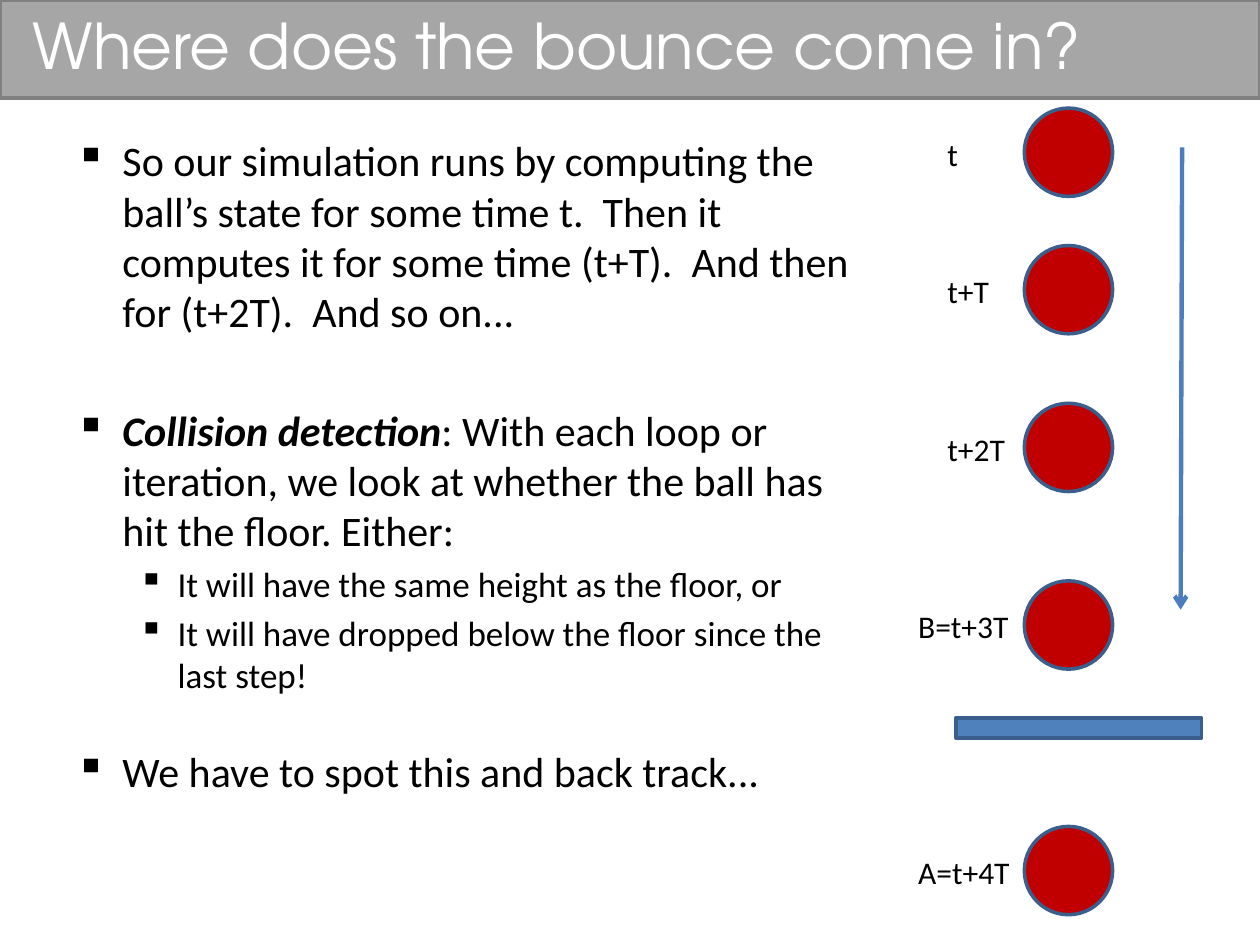
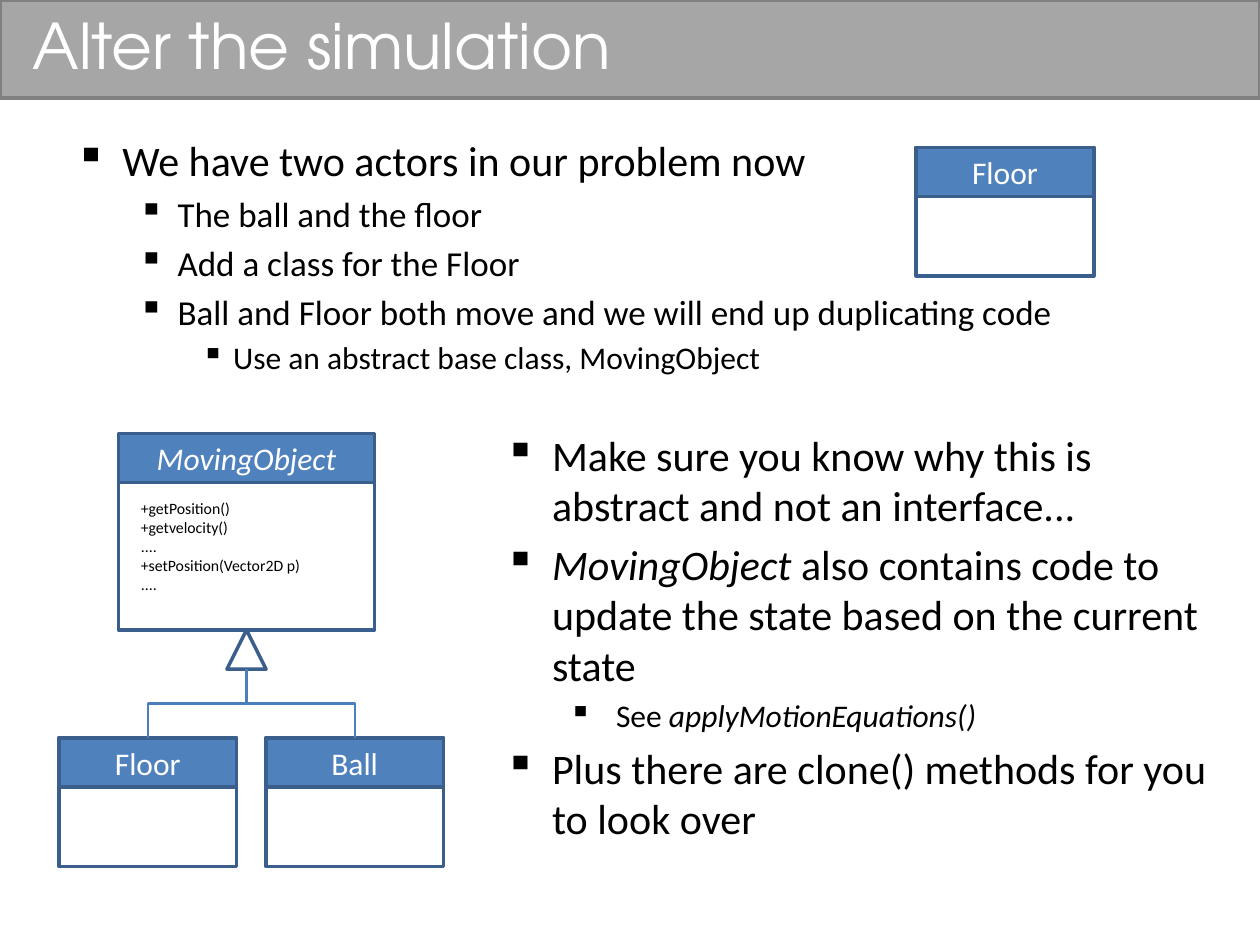
from lxml import etree
from pptx import Presentation
from pptx.dml.color import RGBColor
from pptx.enum.shapes import MSO_CONNECTOR, MSO_SHAPE
from pptx.enum.text import MSO_ANCHOR, PP_ALIGN
from pptx.oxml.ns import qn
from pptx.util import Cm, Pt

RECT, OVAL = MSO_SHAPE.RECTANGLE, MSO_SHAPE.OVAL
PROCESS, EXTRACT = MSO_SHAPE.FLOWCHART_PROCESS, MSO_SHAPE.FLOWCHART_EXTRACT
STRAIGHT, ELBOW = MSO_CONNECTOR.STRAIGHT, MSO_CONNECTOR.ELBOW
LEFT, CENTER = PP_ALIGN.LEFT, PP_ALIGN.CENTER
TOP, MIDDLE = MSO_ANCHOR.TOP, MSO_ANCHOR.MIDDLE

WHITE, BLACK, RED = "FFFFFF", "000000", "C00000"
GREY, EDGE = "A6A6A6", "808080"
BLUE, NAVY, WIRE = "4F81BD", "3A5F8C", "4B7EBC"
BODY, HEAD = "Calibri", "TeX Gyre Adventor"

# Bullet levels: size in points, indent and hang in cm
LEVELS = {
    "main": (24, 0.95, 0.95),
    "sub": (20, 2.06, 0.79),
    "deep": (18, 3.18, 0.64),
    "note": (18, 2.24, 0.95),
}

# Each item: level, runs of (text, style letters), extra space before in points
BOUNCE = [
    ("main", [("So our simulation runs by computing the ball’s state for some "
               "time t.  Then it computes it for some time (t+T).  And then "
               "for (t+2T).  And so on...", "")], 0),
    ("main", [("Collision detection", "bi"),
              (": With each loop or iteration, we look at whether the ball "
               "has hit the floor. Either:", "")], 34),
    ("sub", [("It will have the same height as the floor, or", "")], 0),
    ("sub", [("It will have dropped below the floor since the last step!", "")], 0),
    ("main", [("We have to spot this and back track...", "")], 24),
]
ACTORS = [
    ("main", [("We have two actors in our problem now", "")], 0),
    ("sub", [("The ball and the floor", "")], 0),
    ("sub", [("Add a class for the Floor", "")], 0),
    ("sub", [("Ball and Floor both move and we will end up duplicating code", "")], 0),
    ("deep", [("Use an abstract base class, MovingObject", "")], 0),
]
NOTES = [
    ("main", [("Make sure you know why this is abstract and not an interface...", "")], 0),
    ("main", [("MovingObject", "i"),
              (" also contains code to update the state based on the current state", "")], 0),
    ("note", [("See ", ""), ("applyMotionEquations()", "i")], 0),
    ("main", [("Plus there are clone() methods for you to look over", "")], 0),
]
METHODS = ["+getPosition()", "+getvelocity()", "....", "+setPosition(Vector2D p)", "...."]

# Label, label left, label width, ball top
STEPS = [
    ("t", 18.85, 1.04, 2.18),
    ("t+T", 18.85, 2.39, 4.95),
    ("t+2T", 18.85, 1.98, 8.13),
    ("B=t+3T", 18.26, 2.59, 11.71),
    ("A=t+4T", 18.26, 2.77, 16.66),
]
BALL_X, BALL = 20.65, 1.78

# Name, style, left, top, width, height
LONE = ("Floor", "", 18.47, 2.97, 3.58, 2.59)
BASE = ("MovingObject", "i", 2.39, 8.74, 5.16, 3.96)
KIDS = [("Floor", "", 1.19, 14.88, 3.58, 2.59), ("Ball", "", 5.36, 14.88, 3.58, 2.59)]
TIP = 0.79


def rgb(code):
    return RGBColor.from_string(code)


def write(shape, paras, size=18, color=BLACK, font=BODY, align=LEFT, anchor=TOP, wrap=True):
    """Fill a shape with paragraphs, each a (level or None, runs, extra space) item."""
    frame = shape.text_frame
    frame.word_wrap, frame.vertical_anchor = wrap, anchor
    for n, (level, runs, extra) in enumerate(paras):
        para = frame.paragraphs[0] if n == 0 else frame.add_paragraph()
        para.alignment = align
        points = size
        if level:
            points, indent, hang = LEVELS[level]
            para.space_before = Pt(points * 0.2 + extra)
            props = para._p.get_or_add_pPr()
            props.set("marL", str(Cm(indent)))
            props.set("indent", str(-Cm(hang)))
            etree.SubElement(props, qn("a:buChar")).set("char", "▪")
        for text, style in runs:
            run = para.add_run()
            run.text = text
            run.font.name, run.font.size = font, Pt(points)
            run.font.bold, run.font.italic = "b" in style, "i" in style
            run.font.color.rgb = rgb(color)


def plain(*lines, style=""):
    return [(None, [(line, style)], 0) for line in lines]


def label(slide, paras, x, y, w, h, **look):
    write(slide.shapes.add_textbox(Cm(x), Cm(y), Cm(w), Cm(h)), paras, **look)


def draw(slide, kind, x, y, w, h, fill=None, line=NAVY):
    shape = slide.shapes.add_shape(kind, Cm(x), Cm(y), Cm(w), Cm(h))
    shape.shadow.inherit = False
    if fill:
        shape.fill.solid()
        shape.fill.fore_color.rgb = rgb(fill)
    else:
        shape.fill.background()
    shape.line.color.rgb, shape.line.width = rgb(line), Pt(2)
    return shape


def link(slide, kind, x1, y1, x2, y2, width):
    wire = slide.shapes.add_connector(kind, Cm(x1), Cm(y1), Cm(x2), Cm(y2))
    wire.line.color.rgb, wire.line.width = rgb(WIRE), Pt(width)
    etree.SubElement(wire._element.spPr, qn("a:effectLst"))
    return wire


def branch(slide, x1, y1, x2, y2):
    """Draw an elbow that leaves and arrives vertically: a flat one, turned."""
    side = 1 if x2 < x1 else -1
    mid_x, mid_y = (x1 + x2) / 2, (y1 + y2) / 2
    half_w, half_h = side * (y2 - y1) / 2, abs(x2 - x1) / 2
    wire = link(slide, ELBOW, mid_x - half_w, mid_y - half_h,
                mid_x + half_w, mid_y + half_h, 1.25)
    turn = 90 if side > 0 else 270
    wire._element.spPr.find(qn("a:xfrm")).set("rot", str(turn * 60000))


def card(slide, name, style, x, y, w, h):
    """Draw a class box with its name in the top band."""
    draw(slide, PROCESS, x, y, w, h)
    band = draw(slide, RECT, x, y, w, 0.99, BLUE)
    write(band, plain(name, style=style), color=WHITE, align=CENTER, anchor=MIDDLE)


def start(deck, title):
    """Add a slide with the shared title band."""
    slide = deck.slides.add_slide(deck.slide_layouts[6])
    draw(slide, RECT, 0, 0, 25.4, 1.98, GREY, EDGE)
    label(slide, plain(title), 0.41, 0, 24.2, 1.78,
          size=36, color=WHITE, font=HEAD, anchor=MIDDLE)
    return slide


def bounce(deck):
    slide = start(deck, "Where does the bounce come in?")
    label(slide, BOUNCE, 1.27, 2.59, 16.59, 15.29)
    draw(slide, RECT, 19.27, 14.47, 4.95, 0.41, BLUE)
    for name, x, w, y in STEPS:
        label(slide, plain(name), x, y + 0.41, w, 1.02, wrap=False)
        draw(slide, OVAL, BALL_X, y, BALL, BALL, RED)
    arrow = link(slide, STRAIGHT, 23.83, 2.97, 23.8, 12.29, 2.5)
    etree.SubElement(arrow.line._get_or_add_ln(), qn("a:tailEnd")).set("type", "arrow")


def alter(deck):
    slide = start(deck, "Alter the simulation")
    label(slide, ACTORS, 1.27, 2.59, 22.86, 5.94)
    for item in (LONE, *KIDS, BASE):
        card(slide, *item)
    x, y, w, h = BASE[2:]
    label(slide, plain(*METHODS), x + 0.2, y + 1.19, 3.78, 2.18, size=9, wrap=False)
    mid, foot = x + w / 2, y + h
    draw(slide, EXTRACT, mid - TIP / 2, foot, TIP, TIP)
    for _, _, left, top, wide, _ in KIDS:
        branch(slide, mid, foot + TIP, left + wide / 2, top)
    label(slide, NOTES, 9.93, 8.53, 15.09, 9.73)


def main():
    deck = Presentation()
    deck.slide_width, deck.slide_height = Cm(25.4), Cm(19.05)
    bounce(deck)
    alter(deck)
    deck.save("out.pptx")


if __name__ == "__main__":
    main()
